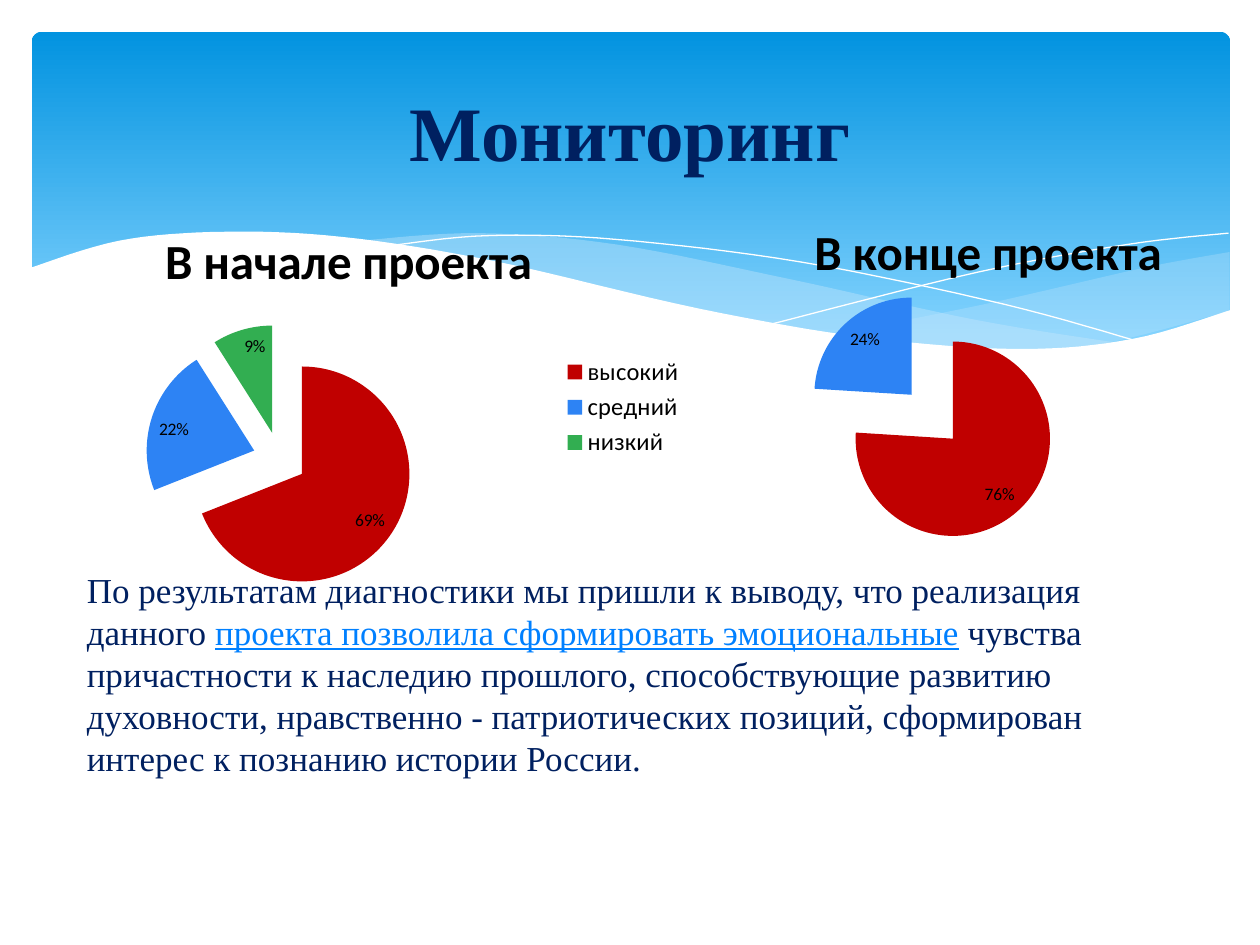
from dataclasses import dataclass
from typing import Optional

from lxml.etree import SubElement
from pptx import Presentation
from pptx.chart.data import CategoryChartData as Data
from pptx.dml.color import RGBColor
from pptx.enum.chart import XL_CHART_TYPE as Kind
from pptx.enum.chart import XL_LABEL_POSITION as Spot
from pptx.enum.chart import XL_LEGEND_POSITION as Side
from pptx.enum.shapes import MSO_SHAPE as Form
from pptx.enum.text import MSO_ANCHOR as Anchor
from pptx.enum.text import MSO_AUTO_SIZE as Fit
from pptx.enum.text import PP_ALIGN as Align
from pptx.oxml.ns import qn
from pptx.util import Cm, Pt

WHITE = RGBColor(0xFF, 0xFF, 0xFF)
BLACK = RGBColor(0, 0, 0)
NAVY = RGBColor(0x00, 0x20, 0x60)
LINK = RGBColor(0x00, 0x80, 0xFF)
DEEP = RGBColor(0x02, 0x93, 0xE0)
SKY = RGBColor(0x83, 0xD3, 0xFE)
MIST = RGBColor(0xC6, 0xE7, 0xFC)
RED = RGBColor(0xC0, 0x00, 0x00)
BLUE = RGBColor(0x2D, 0x83, 0xF4)
GREEN = RGBColor(0x32, 0xAE, 0x51)
LIME = RGBColor(0x5B, 0xD0, 0x78)

SERIF = {"name": "Times New Roman"}
SANS = {"name": "Calibri"}
FINE = 10
UNIT = Cm(0.0254) / FINE
STEPS = 8


@dataclass
class Wave:
    bends: list
    fill: Optional[RGBColor] = None
    alpha: int = 100


@dataclass
class Pie:
    title: str
    box: tuple
    cats: tuple
    vals: tuple
    inks: tuple
    burst: int
    legend: bool = False
    plot: Optional[dict] = None


WAVES = [
    Wave([[(976, 200), (906, 213), (779, 242), (661, 265)],
          [(661, 265), (769, 277), (863, 275), (976, 247)]], MIST, 29),
    Wave([[(893, 273), (775, 254), (629, 222), (489, 194), (380, 185),
           (286, 191)],
          [(286, 191), (404, 211), (566, 248), (722, 274), (828, 278),
           (893, 273)]], MIST, 40),
    Wave([[(309, 195), (387, 187), (489, 190), (636, 208), (795, 241),
           (907, 272)]]),
    Wave([[(613, 257), (776, 216), (895, 194), (975, 185)]]),
    Wave([[(977, 246), (899, 269), (809, 277), (688, 268), (555, 245),
           (391, 207), (271, 188), (177, 184), (95, 191), (23, 213)],
          [(23, 329), (977, 329)]], WHITE),
]

PIES = [
    Pie("В начале проекта", (0, 4.11, 14.05, 8.2),
        ("высокий", "средний", "низкий"), (69, 22, 9),
        (RED, BLUE, GREEN), 25, legend=True),
    Pie("В конце проекта", (13.31, 3.94, 13.21, 7.9),
        ("1", "2", "3"), (76, 24, 0), (RED, BLUE, LIME), 31,
        plot={"x": 0.08, "y": 0.24, "w": 0.67, "h": 0.65}),
]

HEAD = [("Мониторинг", NAVY, {"size": Pt(44), "bold": True})]
BODY = [
    ("По результатам диагностики мы пришли к выводу, что реализация данного ",
     NAVY, {"size": Pt(20)}),
    ("проекта позволила сформировать эмоциональные",
     LINK, {"size": Pt(20), "underline": True}),
    (" чувства причастности к наследию прошлого, способствующие развитию "
     "духовности, нравственно - патриотических позиций, сформирован интерес "
     "к познанию истории России.", NAVY, {"size": Pt(20)}),
]


def style(font, ink: RGBColor, vals: dict) -> None:
    for key, val in vals.items():
        setattr(font, key, val)
    font.color.rgb = ink


def blend(a: float, b: float, c: float, d: float, t: float) -> float:
    bend = (2 * a - 5 * b + 4 * c - d) * t + (3 * b - a - 3 * c + d) * t * t
    return b + t * (c - a + bend) / 2


def smooth(knots: list) -> list:
    ends = [knots[0], *knots, knots[-1]]
    dots = [knots[0]]
    for quad in zip(ends, ends[1:], ends[2:], ends[3:]):
        for step in range(1, STEPS + 1):
            dots.append(tuple(blend(*axis, step / STEPS)
                              for axis in zip(*quad)))
    return [(x * FINE, y * FINE) for x, y in dots]


def draw_sky(slide) -> None:
    sky = slide.shapes.add_shape(
        Form.ROUNDED_RECTANGLE, Cm(0.64), Cm(0.64), Cm(24.16), Cm(6.86))
    sky.adjustments[0] = 0.03
    sky.shadow.inherit = False
    sky.line.fill.background()
    sky.fill.gradient()
    sky.fill.gradient_angle = 270
    for stop, ink, pos in zip(sky.fill.gradient_stops, (DEEP, SKY), (0, 0.9)):
        stop.color.rgb = ink
        stop.position = pos


def draw_wave(slide, wave: Wave) -> None:
    dots = [dot for bend in wave.bends for dot in smooth(bend)]
    pen = slide.shapes.build_freeform(*dots[0], scale=UNIT)
    pen.add_line_segments(dots[1:], close=wave.fill is not None)
    shape = pen.convert_to_shape()
    shape.shadow.inherit = False
    if wave.fill is None:
        shape.fill.background()
        shape.line.color.rgb = WHITE
        shape.line.width = Pt(0)
        return
    shape.line.fill.background()
    shape.fill.solid()
    shape.fill.fore_color.rgb = wave.fill
    if wave.alpha < 100:
        tint = shape._element.spPr.find(qn("a:solidFill"))[0]
        SubElement(tint, qn("a:alpha"), val=str(wave.alpha * 1000))


def draw_text(slide, box: tuple, runs: list, **vals):
    frame = slide.shapes.add_textbox(*map(Cm, box)).text_frame
    frame.word_wrap = True
    for text, ink, font in runs:
        run = frame.paragraphs[0].add_run()
        run.text = text
        style(run.font, ink, SERIF | font)
    for key, val in vals.items():
        setattr(frame, key, val)
    return frame


def set_plot(chart, plot: dict) -> None:
    area = chart._chartSpace.find(".//" + qn("c:plotArea"))
    for old in area.findall(qn("c:layout")):
        area.remove(old)
    lay = SubElement(area, qn("c:layout"))
    area.insert(0, lay)
    man = SubElement(lay, qn("c:manualLayout"))
    rules = {"layoutTarget": "inner", "xMode": "edge", "yMode": "edge"}
    for key, val in (rules | plot).items():
        SubElement(man, qn("c:" + key), val=str(val))


def draw_pie(slide, pie: Pie) -> None:
    data = Data()
    data.categories = pie.cats
    data.add_series("Series 1", pie.vals)
    chart = slide.shapes.add_chart(Kind.PIE, *map(Cm, pie.box), data).chart
    style(chart.font, BLACK, SANS | {"size": Pt(10)})
    chart.has_title = True
    frame = chart.chart_title.text_frame
    frame.text = pie.title
    style(frame.paragraphs[0].runs[0].font, BLACK,
          SANS | {"size": Pt(28), "bold": True})
    chart.has_legend = pie.legend
    if pie.legend:
        chart.legend.position = Side.RIGHT
        chart.legend.include_in_layout = False
        style(chart.legend.font, BLACK, SANS | {"size": Pt(14)})
    plot = chart.plots[0]
    plot.vary_by_categories = True
    ser = plot.series[0]
    for num, ink in enumerate(pie.inks):
        fill = ser.points[num].format.fill
        fill.solid()
        fill.fore_color.rgb = ink
    burst = SubElement(ser._element, qn("c:explosion"), val=str(pie.burst))
    ser._element.find(qn("c:dPt")).addprevious(burst)
    marks = {"show_percentage": True, "show_value": False,
             "number_format": "0%;;", "number_format_is_linked": False,
             "position": Spot.INSIDE_END}
    plot.has_data_labels = True
    for key, val in marks.items():
        setattr(plot.data_labels, key, val)
    if pie.plot:
        set_plot(chart, pie.plot)


def main() -> None:
    deck = Presentation()
    deck.slide_width, deck.slide_height = Cm(25.4), Cm(19.05)
    slide = deck.slides.add_slide(deck.slide_layouts[6])
    draw_sky(slide)
    for wave in WAVES:
        draw_wave(slide, wave)
    head = draw_text(slide, (1.27, 0.74, 22.86, 3.81), HEAD,
                     vertical_anchor=Anchor.MIDDLE)
    head.paragraphs[0].alignment = Align.CENTER
    for pie in PIES:
        draw_pie(slide, pie)
    draw_text(slide, (1.5, 11.33, 21.59, 4.52), BODY,
              auto_size=Fit.SHAPE_TO_FIT_TEXT)
    deck.save("out.pptx")


if __name__ == "__main__":
    main()
